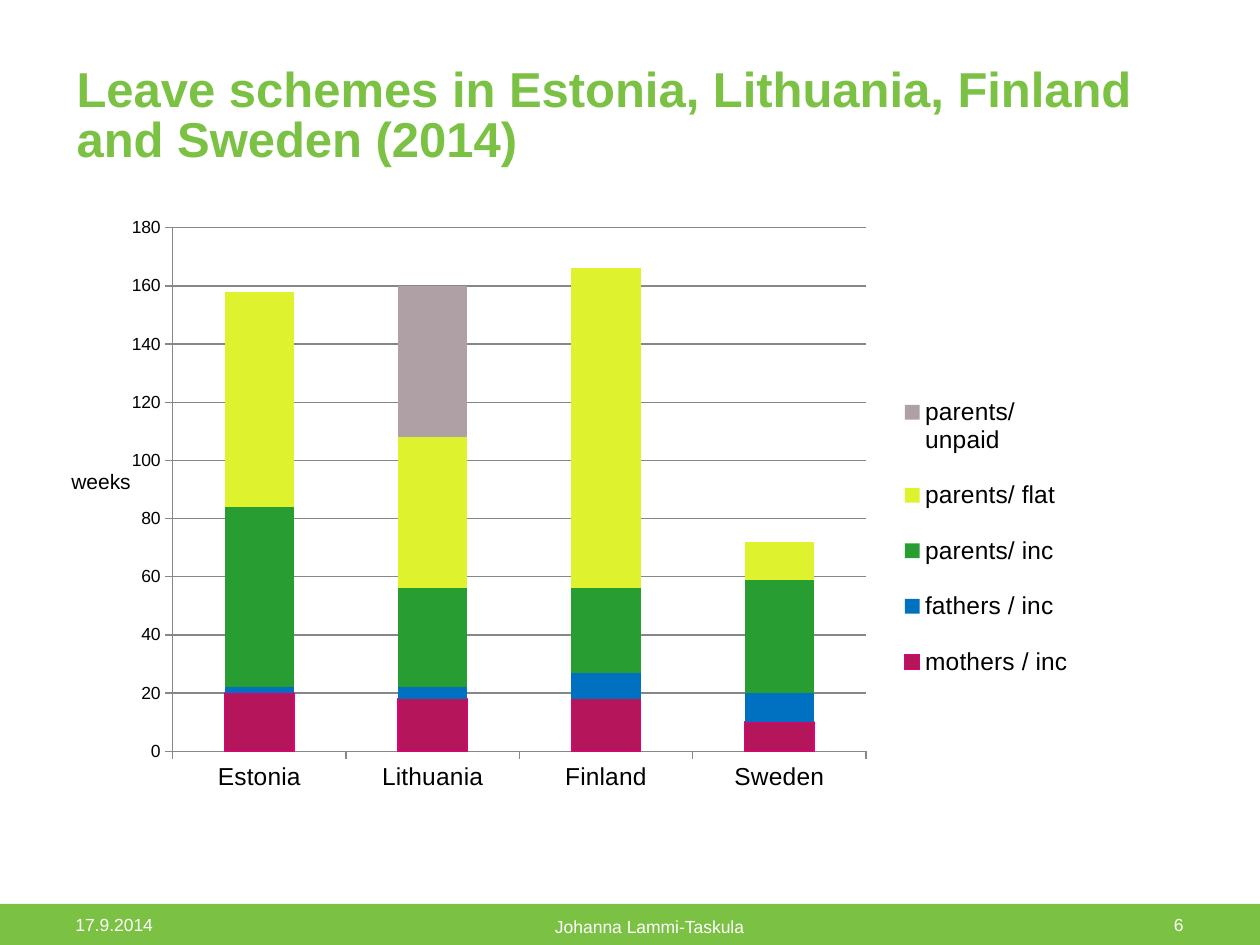
from dataclasses import dataclass

from lxml.etree import SubElement
from pptx import Presentation
from pptx.chart.data import CategoryChartData
from pptx.dml.color import RGBColor
from pptx.enum.chart import XL_CHART_TYPE, XL_LEGEND_POSITION, XL_TICK_MARK
from pptx.enum.shapes import MSO_SHAPE
from pptx.enum.text import MSO_ANCHOR, PP_ALIGN
from pptx.oxml.ns import qn
from pptx.util import Emu, Pt

PX_PER_INCH = 126
FONT = "Arial"
GREEN = RGBColor(0x7B, 0xC1, 0x43)
WHITE = RGBColor(0xFF, 0xFF, 0xFF)
BLACK = RGBColor(0x00, 0x00, 0x00)
GRAY = RGBColor(0x87, 0x87, 0x87)
BERRY = RGBColor(0xB5, 0x15, 0x5A)
PINK = RGBColor(0xE2, 0x00, 0x77)
BLUE = RGBColor(0x00, 0x70, 0xC0)
LEAF = RGBColor(0x27, 0x9D, 0x32)
LIME = RGBColor(0xDF, 0xF2, 0x2E)
MAUVE = RGBColor(0xAE, 0xA0, 0xA5)


@dataclass(frozen=True)
class Box:
    x: int
    y: int
    w: int
    h: int

    def emu(self) -> tuple:
        return tuple(px(v) for v in (self.x, self.y, self.w, self.h))


@dataclass(frozen=True)
class Label:
    text: str
    box: Box
    size: int = 10
    color: RGBColor = WHITE
    align: PP_ALIGN = PP_ALIGN.LEFT
    anchor: MSO_ANCHOR = MSO_ANCHOR.MIDDLE


@dataclass(frozen=True)
class Scheme:
    name: str
    weeks: tuple
    color: RGBColor


COUNTRIES = ("Estonia", "Lithuania", "Finland", "Sweden")
SCHEMES = (
    Scheme("mothers / inc", (20, 18, 18, 10), BERRY),
    Scheme("fathers / inc", (2, 4, 9, 10), BLUE),
    Scheme("parents/ inc", (62, 34, 29, 39), LEAF),
    Scheme("parents/ flat", (74, 52, 110, 13), LIME),
    Scheme("parents/ unpaid", (None, 52, None, None), MAUVE),
)
LABELS = (
    Label("17.9.2014", Box(63, 909, 150, 30)),
    Label("Johanna Lammi-Taskula", Box(233, 911, 833, 30), align=PP_ALIGN.CENTER),
    Label("6", Box(1047, 909, 149, 30), align=PP_ALIGN.RIGHT),
    Label("weeks", Box(59, 462, 90, 38), 12, BLACK, anchor=MSO_ANCHOR.TOP),
)


def px(n: int) -> Emu:
    return Emu(round(n * 914400 / PX_PER_INCH))


def style_font(font, size: int, color: RGBColor, bold: bool = False) -> None:
    font.name, font.size, font.bold = FONT, Pt(size), bold
    font.color.rgb = color


def set_title(slide, text: str, box: Box) -> None:
    sp = slide.shapes.title
    sp.left, sp.top, sp.width, sp.height = box.emu()
    tf = sp.text_frame
    tf.text = text
    tf.word_wrap = True
    tf.vertical_anchor = MSO_ANCHOR.BOTTOM
    p = tf.paragraphs[0]
    p.alignment = PP_ALIGN.LEFT
    p.line_spacing = 0.85
    style_font(p.runs[0].font, 28, GREEN, bold=True)


def add_label(slide, label: Label) -> None:
    tf = slide.shapes.add_textbox(*label.box.emu()).text_frame
    tf.text = label.text
    tf.word_wrap = True
    tf.vertical_anchor = label.anchor
    p = tf.paragraphs[0]
    p.alignment = label.align
    style_font(p.runs[0].font, label.size, label.color)


def add_footer_band(slide, box: Box) -> None:
    sp = slide.shapes.add_shape(MSO_SHAPE.RECTANGLE, *box.emu())
    sp.shadow.inherit = False
    sp.fill.solid()
    sp.fill.fore_color.rgb = GREEN
    sp.line.fill.background()


def set_layout(part, target: str, x: float, y: float, w: float, h: float) -> None:
    """Place a plot area or legend by fractions of the chart size."""
    layout = part.find(qn("c:layout"))
    if layout is None:
        layout = SubElement(part, qn("c:layout"))
        anchor = part.find(qn("c:legendPos"))
        if anchor is None:
            part.insert(0, layout)
        else:
            anchor.addnext(layout)
    manual = SubElement(layout, qn("c:manualLayout"))
    if target:
        SubElement(manual, qn("c:layoutTarget")).set("val", target)
    for tag in ("xMode", "yMode"):
        SubElement(manual, qn(f"c:{tag}")).set("val", "edge")
    for tag, value in zip("xywh", (x, y, w, h)):
        SubElement(manual, qn(f"c:{tag}")).set("val", str(value))


def style_line(line) -> None:
    line.color.rgb = GRAY
    line.width = Pt(0.75)


def add_leave_chart(slide, box: Box) -> None:
    data = CategoryChartData()
    data.categories = COUNTRIES
    for scheme in SCHEMES:
        data.add_series(scheme.name, scheme.weeks)
    chart = slide.shapes.add_chart(XL_CHART_TYPE.COLUMN_STACKED, *box.emu(), data).chart
    style_font(chart.font, 10, BLACK)
    chart.has_title = False

    plot = chart.plots[0]
    plot.gap_width, plot.overlap = 150, 100
    plot.vary_by_categories = False
    for series, scheme in zip(plot.series, SCHEMES):
        series.format.fill.solid()
        series.format.fill.fore_color.rgb = scheme.color
    mothers = plot.series[0].format.line
    mothers.color.rgb = PINK
    mothers.width = Pt(0.75)

    weeks = chart.value_axis
    weeks.minimum_scale, weeks.maximum_scale, weeks.major_unit = 0, 180, 20
    weeks.has_major_gridlines = True
    style_line(weeks.major_gridlines.format.line)
    for axis, size in ((weeks, 10), (chart.category_axis, 14)):
        axis.major_tick_mark = XL_TICK_MARK.OUTSIDE
        style_line(axis.format.line)
        style_font(axis.tick_labels.font, size, BLACK)

    chart.has_legend = True
    legend = chart.legend
    legend.position = XL_LEGEND_POSITION.RIGHT
    legend.include_in_layout = False
    style_font(legend.font, 14, BLACK)
    plot_area = legend._element.getparent().find(qn("c:plotArea"))
    set_layout(plot_area, "inner", 0.06, 0.04, 0.72, 0.88)
    set_layout(legend._element, "", 0.81, 0.28, 0.19, 0.56)


def main() -> None:
    prs = Presentation()
    prs.slide_width, prs.slide_height = px(1260), px(945)
    slide = prs.slides.add_slide(prs.slide_layouts[5])
    add_footer_band(slide, Box(0, 904, 1260, 41))
    set_title(slide, "Leave schemes in Estonia, Lithuania, Finland and Sweden (2014)",
              Box(64, 35, 1132, 139))
    add_leave_chart(slide, Box(115, 204, 963, 595))
    for label in LABELS:
        add_label(slide, label)
    prs.save("out.pptx")


if __name__ == "__main__":
    main()
